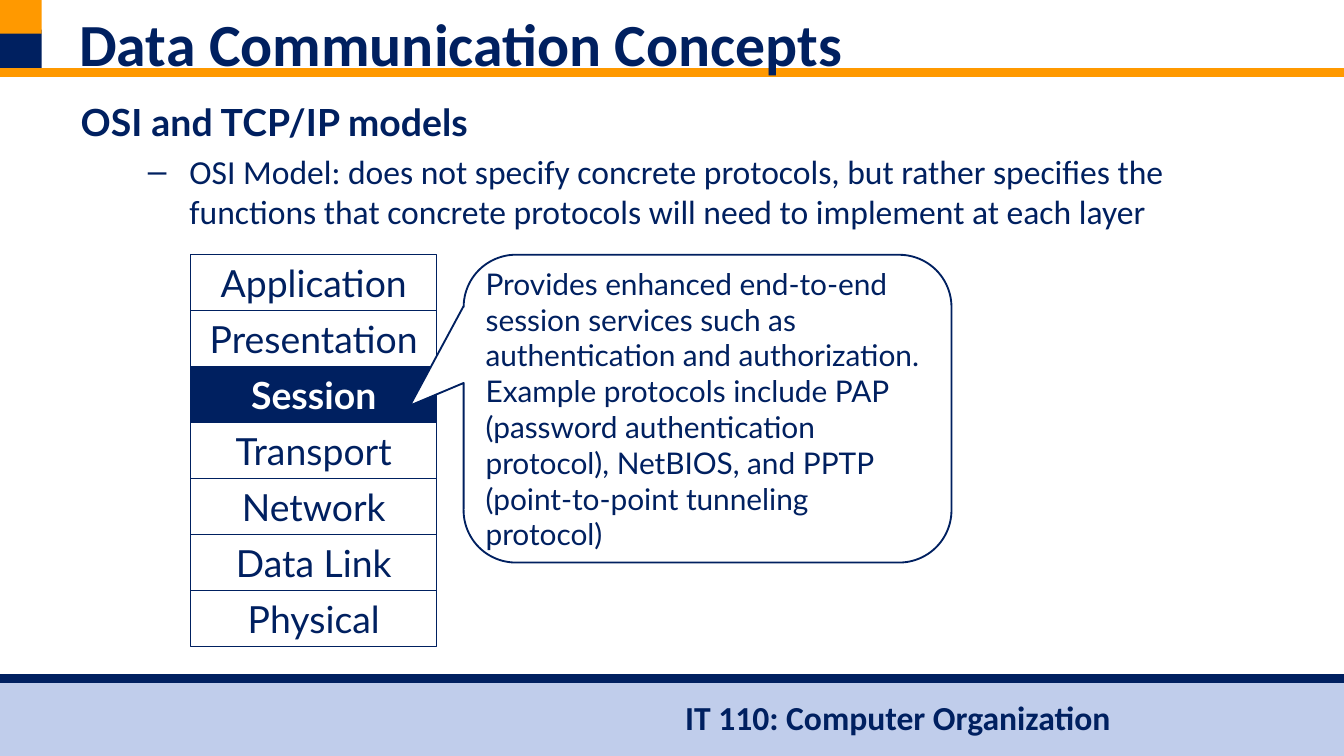
"""Build the OSI session layer slide."""
from dataclasses import dataclass
from typing import Optional

from lxml.etree import SubElement
from pptx import Presentation
from pptx.dml.color import RGBColor
from pptx.enum.shapes import MSO_CONNECTOR, MSO_SHAPE
from pptx.enum.text import MSO_ANCHOR, MSO_AUTO_SIZE, PP_ALIGN
from pptx.oxml.ns import qn
from pptx.util import Inches, Pt

COLORS = {"navy": "002060", "gold": "FF9900", "pale": "C0CDEB", "white": "FFFFFF"}
LAYERS = ["Application", "Presentation", "Session", "Transport",
          "Network", "Data Link", "Physical"]
ACTIVE = "Session"
WIDE = 10
TALL = WIDE * 9 / 16
ROW = 2.5 / 6
TOP = ROW * 4.55


@dataclass
class Box:
    """Hold the place and look of one shape."""
    left: float
    top: float
    width: float
    height: float
    fill: Optional[str] = None
    line: Optional[str] = None
    weight: float = 0.75
    kind: MSO_SHAPE = MSO_SHAPE.RECTANGLE


@dataclass
class Rule:
    """Hold the height and colour of one full-width line."""
    top: float
    color: str


def tint(name: str) -> RGBColor:
    """Return a named colour."""
    return RGBColor.from_string(COLORS[name])


def write(para, text: str, size: float, face: str, color: str = "navy",
          bold: bool = False) -> None:
    """Add one formatted run to a paragraph."""
    run = para.add_run()
    run.text = text
    for key, value in {"size": Pt(size), "name": face, "bold": bold}.items():
        setattr(run.font, key, value)
    run.font.color.rgb = tint(color)


def frame(shape, anchor: MSO_ANCHOR = MSO_ANCHOR.TOP, side: float = 0.1):
    """Set up a text frame and return it."""
    text = shape.text_frame
    look = {"word_wrap": True, "auto_size": MSO_AUTO_SIZE.NONE,
            "vertical_anchor": anchor,
            "margin_left": Inches(side), "margin_right": Inches(side),
            "margin_top": Inches(0.05), "margin_bottom": Inches(0.05)}
    for key, value in look.items():
        setattr(text, key, value)
    return text


def place(shape, left: float, top: float, width: float, height: float) -> None:
    """Move and size a shape."""
    spot = {"left": left, "top": top, "width": width, "height": height}
    for key, value in spot.items():
        setattr(shape, key, Inches(value))


def draw(slide, box: Box):
    """Draw one box and return its shape."""
    shape = slide.shapes.add_shape(
        box.kind, *map(Inches, (box.left, box.top, box.width, box.height)))
    shape.shadow.inherit = False
    if box.fill:
        shape.fill.solid()
        shape.fill.fore_color.rgb = tint(box.fill)
    else:
        shape.fill.background()
    if box.line:
        shape.line.color.rgb = tint(box.line)
        shape.line.width = Pt(box.weight)
    else:
        shape.line.fill.background()
    return shape


def stroke(slide, rule: Rule) -> None:
    """Draw one line across the slide."""
    line = slide.shapes.add_connector(
        MSO_CONNECTOR.STRAIGHT, *map(Inches, (0, rule.top, WIDE, rule.top)))
    line.line.color.rgb = tint(rule.color)
    line.line.width = Pt(4.5)
    SubElement(line.element.find(qn("p:spPr")), qn("a:effectLst"))


def indent(para, left: float, hang: float, before: float, mark: str = "") -> None:
    """Set the spacing, indent and bullet of a paragraph."""
    para.space_before = Pt(before)
    props = para._p.get_or_add_pPr()
    props.set("marL", str(Inches(left)))
    props.set("indent", str(Inches(-hang)))
    if mark:
        color = SubElement(props, qn("a:buClr"))
        SubElement(color, qn("a:srgbClr"), val=COLORS["navy"])
        SubElement(props, qn("a:buChar"), char=mark)
    else:
        SubElement(props, qn("a:buNone"))


def banner(slide) -> None:
    """Draw the bars, lines and course name."""
    draw(slide, Box(0, 5.06, WIDE, TALL - 5.06, "pale"))
    label = slide.shapes.add_textbox(*map(Inches, (5, 5.14, 3.39, 0.4)))
    write(frame(label).paragraphs[0], "IT 110: Computer Organization",
          18, "Calibri", bold=True)
    draw(slide, Box(0, 0.22, 0.31, 0.32, "navy"))
    stroke(slide, Rule(0.54, "gold"))
    draw(slide, Box(0, 0, 0.31, 0.25, "gold"))
    stroke(slide, Rule(5.05, "navy"))


def words(slide) -> None:
    """Fill the title and body placeholders above the banner."""
    title, body = slide.shapes.title, slide.placeholders[1]
    for shape in (body, title):
        slide.shapes.element.append(shape.element)
    place(title, 0.49, 0, 9.02, 0.53)
    head = frame(title).paragraphs[0]
    head.alignment = PP_ALIGN.LEFT
    write(head, "Data Communication Concepts", 32, "Calibri", bold=True)

    place(body, 0.5, 0.69, 9, 3.71)
    text = frame(body)
    topic = text.paragraphs[0]
    indent(topic, 0.38, 0.38, 0)
    write(topic, "OSI and TCP/IP models", 20, "Lato", bold=True)
    point = text.add_paragraph()
    point.level = 1
    indent(point, 0.81, 0.31, 3.6, "–")
    write(point, "OSI Model: does not specify concrete protocols, but rather "
          "specifies the functions that concrete protocols will need to "
          "implement at each layer", 18, "Calibri")


def stack(slide) -> None:
    """Draw the seven layers with the active one filled."""
    for row, name in enumerate(LAYERS):
        on = name == ACTIVE
        shape = draw(slide, Box(1.42, TOP + row * ROW, 1.83, ROW,
                                "navy" if on else None, "navy"))
        para = frame(shape, MSO_ANCHOR.MIDDLE).paragraphs[0]
        para.alignment = PP_ALIGN.CENTER
        write(para, name, 20, "Lato", "white" if on else "navy", on)


def callout(slide) -> None:
    """Draw the callout that explains the active layer."""
    shape = draw(slide, Box(3.45, TOP, 3.63, 2.29, "white", "navy", 1,
                            MSO_SHAPE.ROUNDED_RECTANGULAR_CALLOUT))
    for spot, value in enumerate((-0.61, -0.01, 0.17)):
        shape.adjustments[spot] = value
    para = frame(shape, MSO_ANCHOR.MIDDLE, 0.05).paragraphs[0]
    para.alignment = PP_ALIGN.LEFT
    write(para, "Provides enhanced end-to-end session services such as "
          "authentication and authorization. Example protocols include PAP "
          "(password authentication protocol), NetBIOS, and PPTP "
          "(point-to-point tunneling protocol)", 16, "Lato")


def main() -> None:
    """Build and save the slide."""
    deck = Presentation()
    deck.slide_width, deck.slide_height = Inches(WIDE), Inches(TALL)
    slide = deck.slides.add_slide(deck.slide_layouts[1])
    for part in (banner, words, stack, callout):
        part(slide)
    deck.save("out.pptx")


if __name__ == "__main__":
    main()
